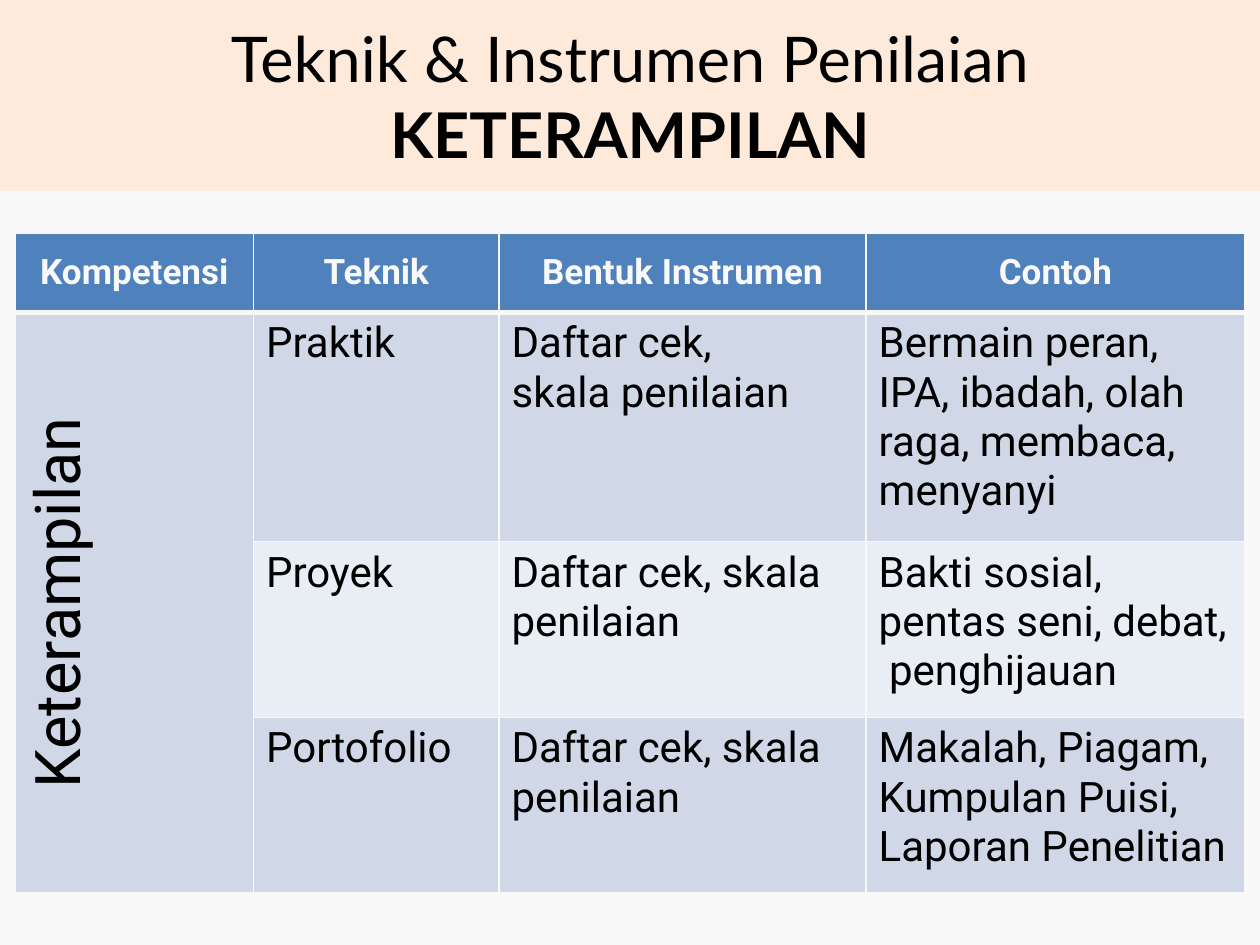
from pptx import Presentation, util as u
from pptx.dml.color import RGBColor
from pptx.enum import shapes, text
from pptx.oxml import parse_xml
from pptx.oxml.ns import nsdecls

COLOURS = {
    "paper": "F9F9F9",
    "banner": "FDEADA",
    "header": "4F81BD",
    "band_dark": "D0D8E8",
    "band_light": "E9EDF4",
    "ink": "000000",
}


def write(paragraph, content, font="Roboto", size=24, colour="ink", bold=False, align=None):
    paragraph.alignment = align
    run = paragraph.add_run()
    run.text = content
    run.font.name = font
    run.font.size = u.Pt(size)
    run.font.bold = bold
    run.font.color.rgb = RGBColor.from_string(COLOURS[colour])


def style_cell(cell, fill, bottom_width=1):
    cell.fill.solid()
    cell.fill.fore_color.rgb = RGBColor.from_string(COLOURS[fill])
    properties = cell._tc.get_or_add_tcPr()
    widths = {"lnL": 1, "lnR": 1, "lnT": 1, "lnB": bottom_width}
    for position, (side, width) in enumerate(widths.items()):
        properties.insert(position, parse_xml(
            f'<a:{side} {nsdecls("a")} w="{u.Pt(width)}"><a:solidFill>'
            f'<a:srgbClr val="{COLOURS["paper"]}"/></a:solidFill></a:{side}>'))


presentation = Presentation()
presentation.slide_width = u.Cm(25.4)
presentation.slide_height = u.Cm(19.05)
slide = presentation.slides.add_slide(presentation.slide_layouts[6])
slide.background.fill.solid()
slide.background.fill.fore_color.rgb = RGBColor.from_string(COLOURS["paper"])
centre = text.PP_ALIGN.CENTER

# Assessment table
headings = ["Kompetensi", "Teknik", "Bentuk Instrumen", "Contoh"]
techniques = [
    ["Praktik", "Daftar cek,\nskala penilaian",
     "Bermain peran, IPA, ibadah, olah raga, membaca, menyanyi"],
    ["Proyek", "Daftar cek, skala penilaian",
     "Bakti sosial, pentas seni, debat,  penghijauan"],
    ["Portofolio", "Daftar cek, skala penilaian",
     "Makalah, Piagam, Kumpulan Puisi, Laporan Penelitian"],
]
column_widths = [4.8, 4.95, 7.4, 7.63]
row_heights = [1.6, 4.62, 3.54, 3.54]
table = slide.shapes.add_table(
    len(row_heights), len(column_widths), u.Cm(0.31), u.Cm(4.7),
    u.Cm(sum(column_widths)), u.Cm(sum(row_heights))).table
for column, width in zip(table.columns, column_widths):
    column.width = u.Cm(width)
for row, height in zip(table.rows, row_heights):
    row.height = u.Cm(height)

# Header row
for column_index, heading in enumerate(headings):
    cell = table.cell(0, column_index)
    style_cell(cell, "header", bottom_width=3)
    cell.vertical_anchor = text.MSO_ANCHOR.MIDDLE
    write(cell.text_frame.paragraphs[0], heading, size=20, colour="paper",
          bold=True, align=centre)

# Technique rows in alternating bands
for row_index, entries in enumerate(techniques, start=1):
    band = "band_dark" if row_index % 2 else "band_light"
    for column_index, entry in enumerate(entries, start=1):
        cell = table.cell(row_index, column_index)
        style_cell(cell, band)
        frame = cell.text_frame
        for line_index, line in enumerate(entry.split("\n")):
            paragraph = frame.add_paragraph() if line_index else frame.paragraphs[0]
            write(paragraph, line)

# Competence cell, merged down the first column and read upwards
competence = table.cell(1, 0)
competence.merge(table.cell(3, 0))
style_cell(competence, "band_dark")
competence.vertical_anchor = text.MSO_ANCHOR.MIDDLE
competence._tc.get_or_add_tcPr().set("vert", "vert270")
write(competence.text_frame.paragraphs[0], "Keterampilan", size=36, align=centre)

# Title banner
banner = slide.shapes.add_shape(
    shapes.MSO_SHAPE.RECTANGLE, 0, 0, presentation.slide_width, u.Cm(3.85))
banner.shadow.inherit = False
banner.fill.solid()
banner.fill.fore_color.rgb = RGBColor.from_string(COLOURS["banner"])
banner.line.fill.background()
banner.text_frame.word_wrap = True
banner.text_frame.vertical_anchor = text.MSO_ANCHOR.MIDDLE
title = banner.text_frame.paragraphs[0]
write(title, "Teknik & Instrumen Penilaian ", font="Lato", size=36, align=centre)
write(title, "KETERAMPILAN", font="Lato", size=36, bold=True, align=centre)

presentation.save("out.pptx")
